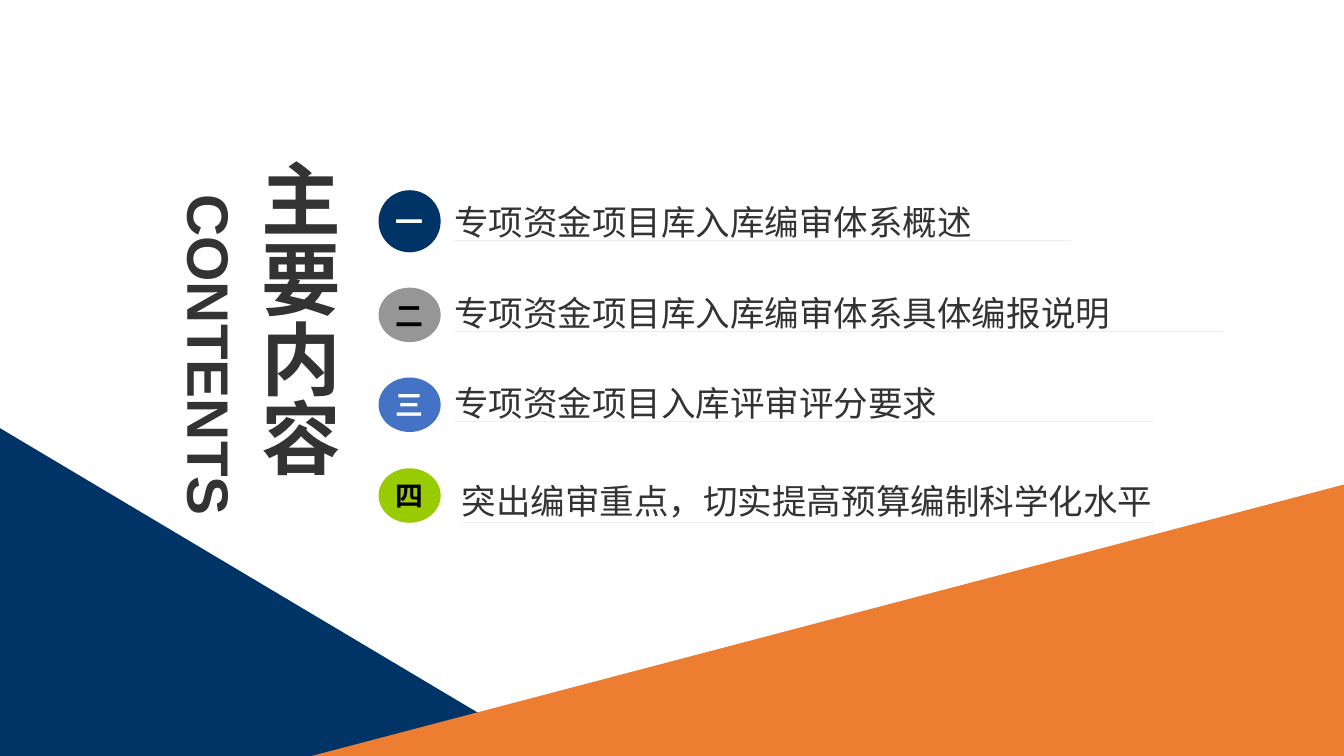
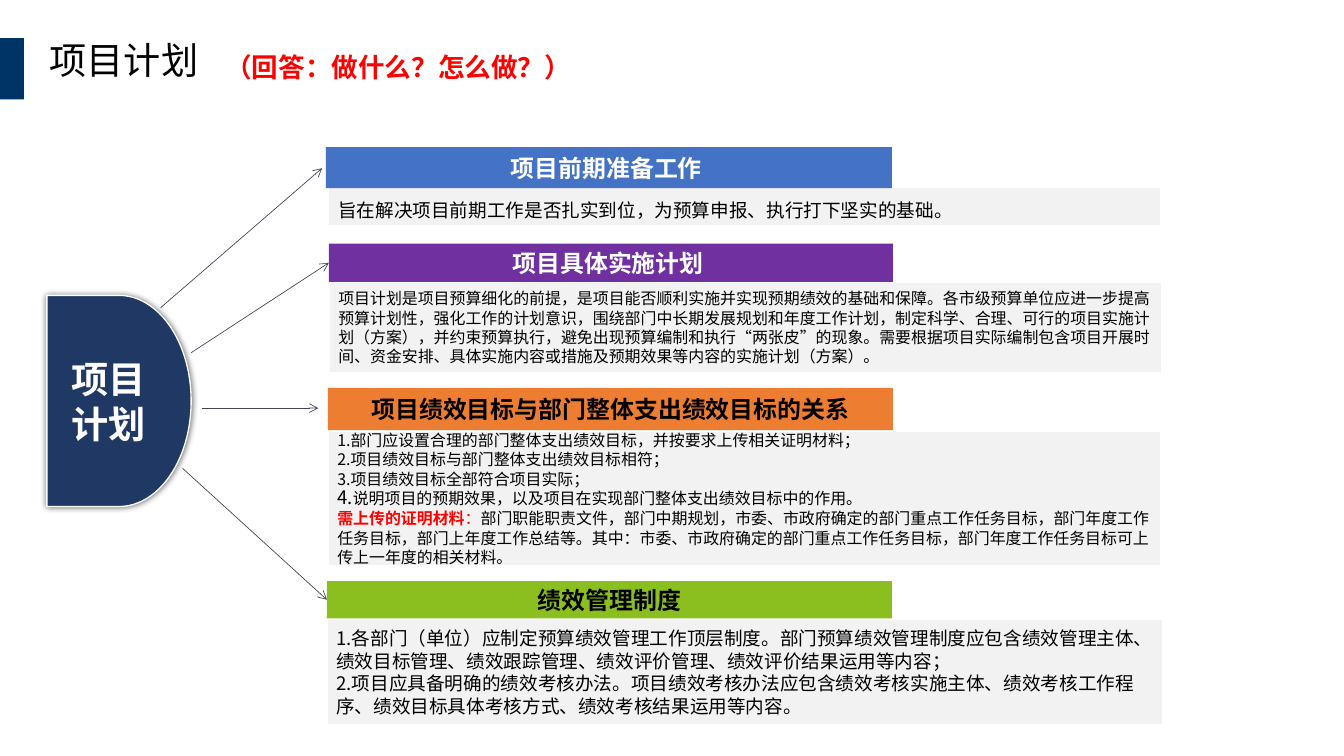
from lxml import etree
from pptx import Presentation, util as u
from pptx.dml.color import RGBColor
from pptx.enum import lang, shapes, text
from pptx.oxml import ns

NAVY, BLUE, ORANGE, PURPLE, GREEN = "003366", "4472C4", "ED7D31", "7030A0", "8BBF20"
WHITE, BLACK, DARK, RED, PALE = "FFFFFF", "000000", "333333", "FF0000", "F2F2F2"
CJK, LATIN, HEADING = "Noto Sans CJK SC", "Arial", "Roboto Condensed"
WIDTH, HEIGHT = 14.06, 7.91
LEFT, CENTER = text.PP_ALIGN.LEFT, text.PP_ALIGN.CENTER
NO_INSETS = (0, 0)
INSETS = (0.1, 0.05)

CONTENTS = [
    ("一", "专项资金项目库入库编审体系概述", NAVY, WHITE, 1.99, 0.65, (4.75, 2.01), (11.2, 2.52)),
    ("二", "专项资金项目库入库编审体系具体编报说明", "969696", BLACK, 3.01, 0.57, (4.75, 2.96), (12.78, 3.47)),
    ("三", "专项资金项目入库评审评分要求", BLUE, WHITE, 3.95, 0.57, (4.75, 3.9), (12.07, 4.41)),
    ("四", "突出编审重点，切实提高预算编制科学化水平", "99CC00", BLACK, 4.9, 0.57, (4.83, 4.9), (12.07, 5.47)),
]

PREPARATION = ["旨在解决项目前期工作是否扎实到位，为预算申报、执行打下坚实的基础。"]
IMPLEMENTATION = [
    "项目计划是项目预算细化的前提，是项目能否顺利实施并实现预期绩效的基础和保障。"
    "各市级预算单位应进一步提高预算计划性，强化工作的计划意识，围绕部门中长期发展规划和年度工作计划，"
    "制定科学、合理、可行的项目实施计划（方案），并约束预算执行，避免出现预算编制和执行“两张皮”的现象。"
    "需要根据项目实际编制包含项目开展时间、资金安排、具体实施内容或措施及预期效果等内容的实施计划（方案）。"
]
TARGETS = [
    "1.部门应设置合理的部门整体支出绩效目标，并按要求上传相关证明材料；",
    "2.项目绩效目标与部门整体支出绩效目标相符；",
    "3.项目绩效目标全部符合项目实际；",
    [("4.", {"size": 14}), ("说明项目的预期效果，以及项目在实现部门整体支出绩效目标中的作用。", {})],
    [("需上传的证明材料", {"color": RED, "bold": True}),
     ("：", {"color": RED, "name": HEADING}),
     ("部门职能职责文件，部门中期规划，市委、市政府确定的部门重点工作任务目标，部门年度工作任务目标，"
      "部门上年度工作总结等。其中：市委、市政府确定的部门重点工作任务目标，部门年度工作任务目标可上传上一年度的相关材料。", {})],
]
MANAGEMENT = [
    "1.各部门（单位）应制定预算绩效管理工作顶层制度。部门预算绩效管理制度应包含绩效管理主体、"
    "绩效目标管理、绩效跟踪管理、绩效评价管理、绩效评价结果运用等内容；",
    "2.项目应具备明确的绩效考核办法。项目绩效考核办法应包含绩效考核实施主体、绩效考核工作程序、"
    "绩效目标具体考核方式、绩效考核结果运用等内容。",
]
SECTIONS = [
    ("项目前期准备工作 ", BLUE, WHITE, (3.41, 1.54, 5.92, 0.43), PREPARATION, 14, 1.3, (3.44, 1.96, 8.7, 0.4)),
    ("项目具体实施计划 ", PURPLE, WHITE, (3.44, 2.55, 5.9, 0.4), IMPLEMENTATION, 12, u.Pt(14.6), (3.44, 2.95, 8.71, 0.95)),
    ("项目绩效目标与部门整体支出绩效目标的关系", ORANGE, BLACK, (3.43, 4.06, 5.91, 0.44), TARGETS, 12, u.Pt(14.7), (3.43, 4.51, 8.71, 1.41)),
    ("绩效管理制度", GREEN, BLACK, (3.42, 6.08, 5.91, 0.39), MANAGEMENT, 14, u.Pt(17), (3.42, 6.48, 8.74, 1.1)),
]
ARROWS = [
    ((1.68, 3.22), (3.37, 1.76), None),
    ((2, 3.69), (3.44, 2.75), 1),
    ((2.11, 4.27), (3.33, 4.27), None),
    ((1.91, 4.9), (3.42, 6.28), 3),
]


def rgb(value):
    return RGBColor.from_string(value)


def inches(values):
    return [u.Inches(value) for value in values]


def add_run(paragraph, content, size, color, name=CJK, bold=False):
    run = paragraph.add_run()
    run.text = content
    values = {"size": u.Pt(size), "name": name, "bold": bold,
              "language_id": lang.MSO_LANGUAGE_ID.SIMPLIFIED_CHINESE}
    for attribute, value in values.items():
        setattr(run.font, attribute, value)
    run.font.color.rgb = rgb(color)
    etree.SubElement(run.font._element, ns.qn("a:ea"), typeface=CJK)


def write(shape, paragraphs, style, align=LEFT, insets=INSETS, wrap=True, spacing=1.0):
    frame = shape.text_frame
    horizontal, vertical = inches(insets)
    values = {"margin_left": horizontal, "margin_right": horizontal,
              "margin_top": vertical, "margin_bottom": vertical,
              "auto_size": text.MSO_AUTO_SIZE.NONE, "word_wrap": wrap,
              "vertical_anchor": text.MSO_ANCHOR.MIDDLE}
    for attribute, value in values.items():
        setattr(frame, attribute, value)
    for index, content in enumerate(paragraphs):
        paragraph = frame.add_paragraph() if index else frame.paragraphs[0]
        paragraph.alignment = align
        paragraph.line_spacing = spacing
        runs = [(content, {})] if isinstance(content, str) else content
        for words, changes in runs:
            add_run(paragraph, words, **{**style, **changes})


def set_title(slide, content, box, style, **layout):
    title = slide.shapes.title
    for attribute, value in zip(("left", "top", "width", "height"), inches(box)):
        setattr(title, attribute, value)
    write(title, [content], style, **layout)
    return title


def add_text(slide, box, content, style, **layout):
    shape = slide.shapes.add_textbox(*inches(box))
    write(shape, [content], style, **layout)
    return shape


def paint(shape, fill, line=None):
    shape.shadow.inherit = False
    shape.fill.solid()
    shape.fill.fore_color.rgb = rgb(fill)
    if line:
        shape.line.color.rgb = rgb(line)
        shape.line.width = u.Pt(1)
    else:
        shape.line.fill.background()
    return shape


def add_block(slide, kind, box, fill, line=None):
    return paint(slide.shapes.add_shape(kind, *inches(box)), fill, line)


def add_outline(slide, contours, fill):
    builder = None
    for contour in contours:
        start, *others = [inches(point) for point in contour]
        if builder is None:
            builder = slide.shapes.build_freeform(*start)
        else:
            builder.move_to(*start)
        builder.add_line_segments(others, close=True)
    return paint(builder.convert_to_shape(), fill)


def add_arrow(slide, start, end, color):
    connector = slide.shapes.add_connector(
        shapes.MSO_CONNECTOR.STRAIGHT, *inches(start + end))
    connector.line.color.rgb = rgb(color)
    connector.line.width = u.Pt(0.5)
    properties = connector._element.spPr
    etree.SubElement(properties.find(ns.qn("a:ln")), ns.qn("a:tailEnd"), type="arrow")
    etree.SubElement(properties, ns.qn("a:effectLst"))
    return connector


def add_glow(shape):
    effects = shape._element.spPr.find(ns.qn("a:effectLst"))
    shadow = etree.SubElement(effects, ns.qn("a:outerShdw"),
                              blurRad=str(u.Pt(5)), dist="0", dir="0")
    color = etree.SubElement(shadow, ns.qn("a:srgbClr"), val=BLACK)
    etree.SubElement(color, ns.qn("a:alpha"), val="60000")


def add_item(slide, content, start, end):
    left, top = start
    right, base = end
    item = add_outline(slide, [[(left, base), (right, base), (left, base)],
                               [(left, top), (left, top), (left, top)]], "7F7F7F")
    write(item, [content], {"size": 26, "color": DARK, "name": LATIN},
          insets=NO_INSETS, spacing=1.25)


def build_contents(slide):
    title = set_title(slide, "主要内容", (2.62, 1.67, 1, 4.15),
                      {"size": 60, "color": DARK, "name": LATIN, "bold": True},
                      insets=NO_INSETS)
    title._element.txBody.bodyPr.set("vert", "eaVert")
    subtitle = add_text(slide, (0.4, 3.35, 3.61, 0.73), "CONTENTS",
                        {"size": 44, "color": DARK, "name": LATIN, "bold": True},
                        align=CENTER, insets=NO_INSETS)
    subtitle.rotation = 90
    for number, content, fill, color, top, height, start, end in CONTENTS:
        badge = add_block(slide, shapes.MSO_SHAPE.OVAL, (3.96, top, 0.65, height), fill)
        write(badge, [number], {"size": 21, "color": color, "name": LATIN, "bold": True},
              align=CENTER, insets=NO_INSETS)
        add_item(slide, content, start, end)
    add_outline(slide, [[(0, 4.48), (5.76, HEIGHT), (0, HEIGHT)]], NAVY)
    add_outline(slide, [[(WIDTH, 5.07), (WIDTH, HEIGHT), (3.26, HEIGHT)]], ORANGE)


def add_section(slide, heading, fill, color, heading_box, paragraphs, size, spacing, body_box):
    body = add_block(slide, shapes.MSO_SHAPE.RECTANGLE, body_box, PALE, WHITE)
    write(body, paragraphs, {"size": size, "color": BLACK}, spacing=spacing)
    header = add_block(slide, shapes.MSO_SHAPE.RECTANGLE, heading_box, fill)
    write(header, [heading], {"size": 18, "color": color, "name": HEADING, "bold": True},
          align=CENTER)
    return header


def build_plan(slide):
    set_title(slide, "项目计划", (0.42, 0.33, 1.78, 0.58),
              {"size": 28, "color": BLACK, "name": HEADING}, wrap=False)
    add_block(slide, shapes.MSO_SHAPE.RECTANGLE, (0, 0.4, 0.25, 0.64), NAVY)
    add_text(slide, (2.26, 0.48, 3.86, 0.44), "（回答：做什么？怎么做？）",
             {"size": 20, "color": RED, "bold": True}, wrap=False)
    headers = [add_section(slide, *section) for section in SECTIONS]
    for start, end, target in ARROWS:
        connector = add_arrow(slide, start, end, "414455")
        if target is not None:
            connector.end_connect(headers[target], 1)
    hub = add_block(slide, shapes.MSO_SHAPE.FLOWCHART_DELAY, (0.49, 3.09, 1.51, 2.21),
                    "203864", WHITE)
    add_glow(hub)
    write(hub, ["项目计划"], {"size": 28, "color": WHITE, "bold": True},
          align=CENTER, spacing=u.Pt(34))


def main():
    presentation = Presentation()
    presentation.slide_width = u.Inches(WIDTH)
    presentation.slide_height = u.Inches(HEIGHT)
    for build in (build_contents, build_plan):
        build(presentation.slides.add_slide(presentation.slide_layouts[5]))
    presentation.save("out.pptx")


if __name__ == "__main__":
    main()
